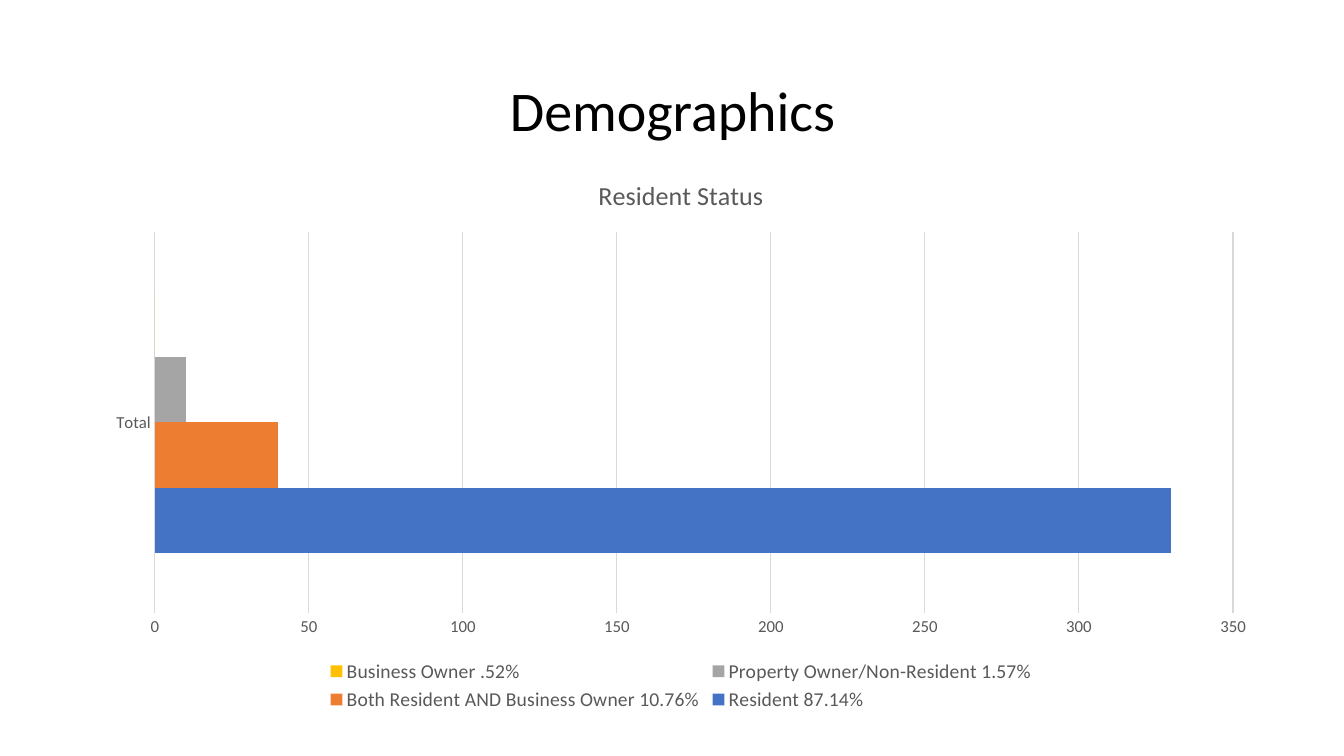
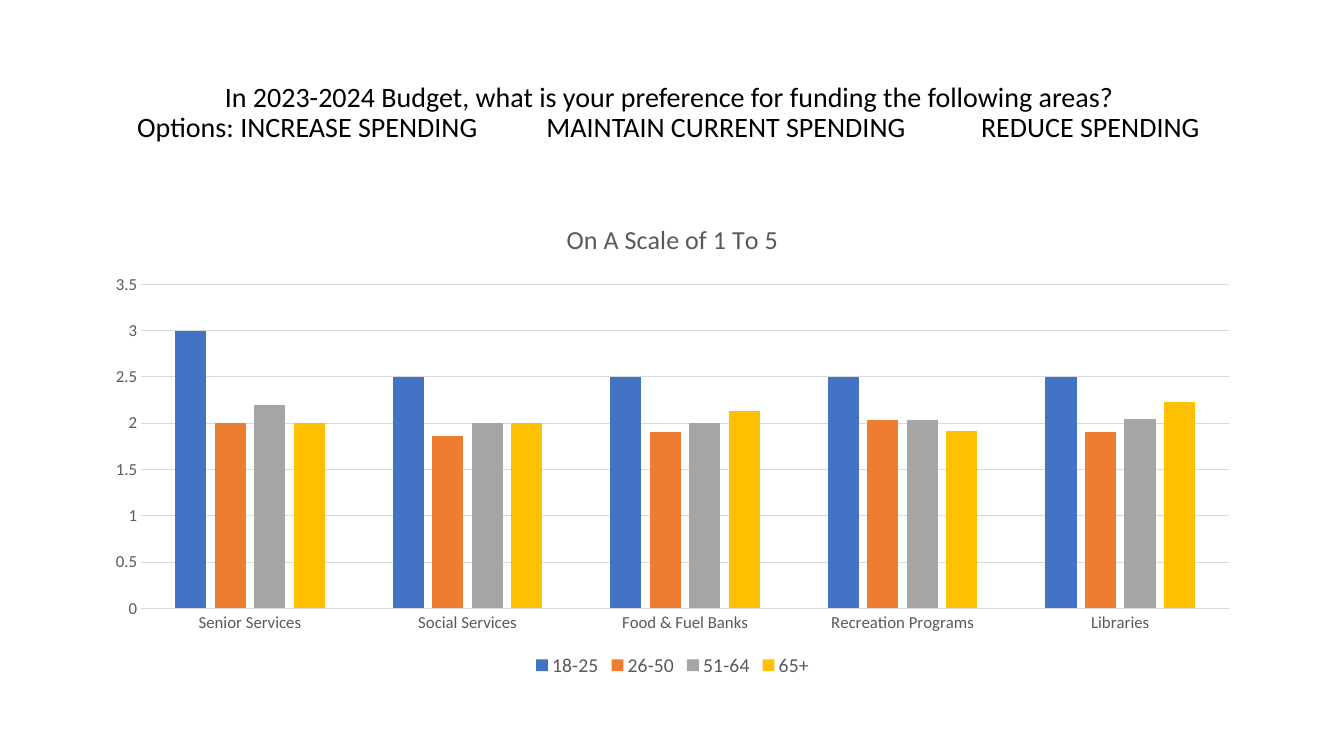
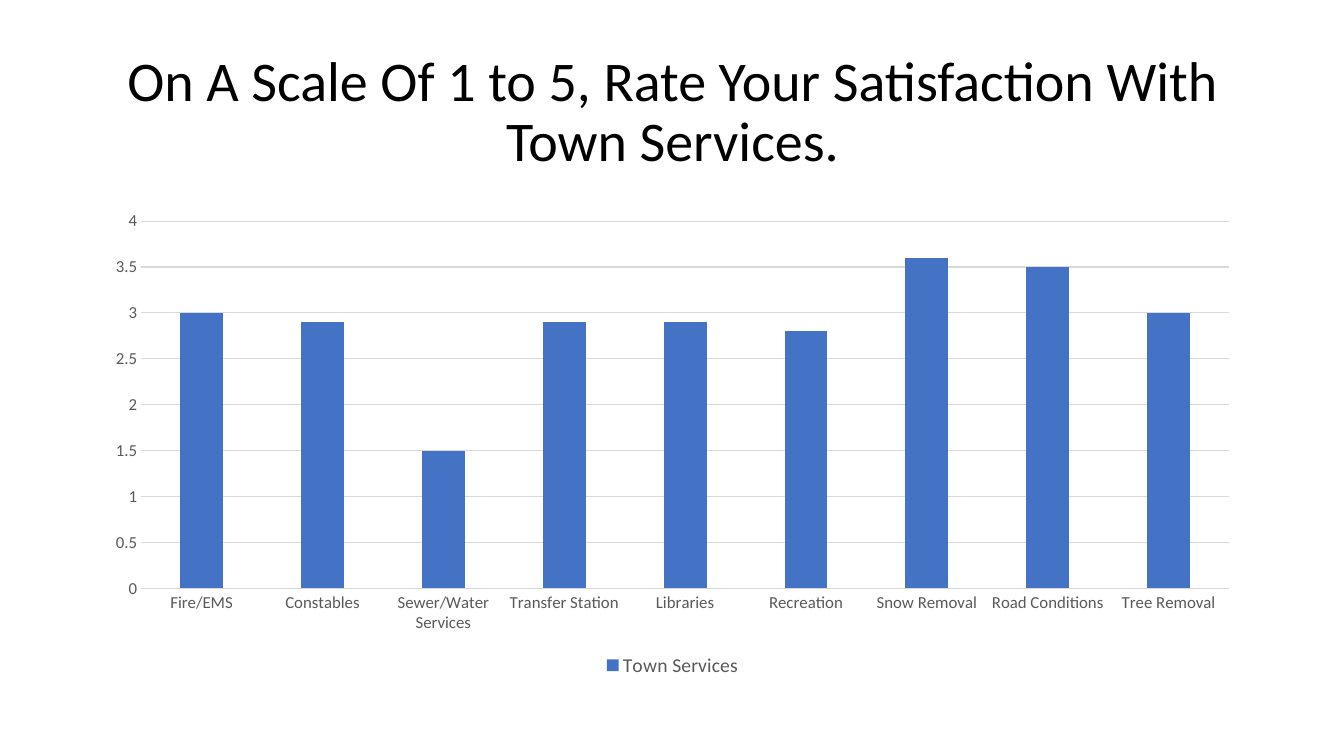
"""Build three survey result slides, each with a title and a bar chart."""
import dataclasses

import pptx
import pptx.chart.data
import pptx.dml.color
import pptx.enum.chart
import pptx.enum.text
import pptx.oxml.ns
import pptx.util
from lxml import etree

Inches = pptx.util.Inches
Pt = pptx.util.Pt
Color = pptx.dml.color.RGBColor.from_string
ChartType = pptx.enum.chart.XL_CHART_TYPE


@dataclasses.dataclass(frozen=True)
class Theme:
    font: str = "Calibri"
    ink: str = "000000"
    label: str = "595959"
    grid: str = "D9D9D9"
    series: tuple = ("4472C4", "ED7D31", "A5A5A5", "FFC000")
    title_size: float = 40
    question_size: float = 20
    chart_title_size: float = 18.6
    chart_size: float = 10
    legend_size: float = 14
    axis_size: float = 12
    line_width: float = 0.75


class SurveyDeck:
    def __init__(self, theme):
        self.theme = theme
        self.deck = pptx.Presentation()
        self.deck.slide_width = Inches(13.33)
        self.deck.slide_height = Inches(7.5)
        self.page = None

    def style_font(self, font, size, color):
        font.name = self.theme.font
        font.size = Pt(size)
        font.bold = False
        font.color.rgb = Color(color)

    def style_line(self, line):
        line.color.rgb = Color(self.theme.grid)
        line.width = Pt(self.theme.line_width)

    def add_page(self, lines, size, tab_stops=()):
        self.page = self.deck.slides.add_slide(self.deck.slide_layouts[5])
        box = self.page.shapes.title
        box.left, box.top = Inches(0.92), Inches(0.4)
        box.width, box.height = Inches(11.5), Inches(1.45)
        frame = box.text_frame
        frame.text = "\n".join(lines)
        frame.word_wrap = True
        frame.auto_size = pptx.enum.text.MSO_AUTO_SIZE.NONE
        frame.vertical_anchor = pptx.enum.text.MSO_ANCHOR.MIDDLE
        for para in frame.paragraphs:
            para.line_spacing = 0.9
            para.alignment = pptx.enum.text.PP_ALIGN.CENTER
            self.style_font(para.font, size, self.theme.ink)
            if "\t" in para.text:
                para.alignment = pptx.enum.text.PP_ALIGN.LEFT
                self.add_tab_stops(para, tab_stops)

    def add_tab_stops(self, para, tab_stops):
        tabs = etree.Element(pptx.oxml.ns.qn("a:tabLst"))
        for stop in tab_stops:
            etree.SubElement(tabs, pptx.oxml.ns.qn("a:tab"), pos=str(Inches(stop)), algn="l")
        properties = para._p.get_or_add_pPr()
        properties.find(pptx.oxml.ns.qn("a:defRPr")).addprevious(tabs)

    def add_chart(self, kind, categories, series, gap, title=None, overlap=0,
                  area=(0.92, 2, 11.5, 4.76)):
        data = pptx.chart.data.CategoryChartData()
        data.categories = categories
        for name, values in series.items():
            data.add_series(name, values)
        chart = self.page.shapes.add_chart(kind, *map(Inches, area), data).chart
        self.style_font(chart.font, self.theme.chart_size, self.theme.ink)
        chart.has_title = title is not None
        if title:
            frame = chart.chart_title.text_frame
            frame.text = title
            self.style_font(frame.paragraphs[0].font, self.theme.chart_title_size, self.theme.label)
            chart.chart_title.include_in_layout = False
        chart.has_legend = True
        chart.legend.position = pptx.enum.chart.XL_LEGEND_POSITION.BOTTOM
        chart.legend.include_in_layout = False
        self.style_font(chart.legend.font, self.theme.legend_size, self.theme.label)
        for axis in (chart.category_axis, chart.value_axis):
            axis.major_tick_mark = pptx.enum.chart.XL_TICK_MARK.NONE
            axis.minor_tick_mark = pptx.enum.chart.XL_TICK_MARK.NONE
            self.style_font(axis.tick_labels.font, self.theme.axis_size, self.theme.label)
        chart.category_axis.has_major_gridlines = False
        self.style_line(chart.category_axis.format.line)
        chart.value_axis.has_major_gridlines = True
        self.style_line(chart.value_axis.major_gridlines.format.line)
        chart.value_axis.format.line.fill.background()
        plot = chart.plots[0]
        plot.vary_by_categories = False
        plot.gap_width = gap
        plot.overlap = overlap
        for bars, color in zip(plot.series, self.theme.series):
            bars.format.fill.solid()
            bars.format.fill.fore_color.rgb = Color(color)
            bars.invert_if_negative = False


def main():
    theme = Theme()
    survey = SurveyDeck(theme)

    survey.add_page(["Demographics"], theme.title_size)
    survey.add_chart(
        ChartType.BAR_CLUSTERED,
        ["Total"],
        {
            "Resident 87.14%": [330],
            "Both Resident AND Business Owner 10.76%": [40],
            "Property Owner/Non-Resident 1.57%": [10],
            "Business Owner .52%": [0],
        },
        gap=182,
        title="Resident Status",
        area=(0.92, 1.55, 11.67, 5.55),
    )

    survey.add_page(
        [
            "In 2023-2024 Budget, what is your preference for funding the following areas? ",
            "\tOptions: INCREASE SPENDING\tMAINTAIN CURRENT SPENDING\tREDUCE SPENDING",
        ],
        theme.question_size,
        tab_stops=(0.34, 4.4, 8.71),
    )
    survey.add_chart(
        ChartType.COLUMN_CLUSTERED,
        ["Senior Services", "Social Services", "Food & Fuel Banks",
         "Recreation Programs", "Libraries"],
        {
            "18-25": [3, 2.5, 2.5, 2.5, 2.5],
            "26-50": [2, 1.86, 1.9, 2.03, 1.9],
            "51-64": [2.2, 2, 2, 2.03, 2.04],
            "65+": [2, 2, 2.13, 1.92, 2.23],
        },
        gap=219,
        overlap=-27,
        title="On A Scale of 1 To 5",
    )

    survey.add_page(
        ["On A Scale Of 1 to 5, Rate Your Satisfaction With Town Services."],
        theme.title_size,
    )
    survey.add_chart(
        ChartType.COLUMN_CLUSTERED,
        ["Fire/EMS", "Constables", "Sewer/Water Services", "Transfer Station", "Libraries",
         "Recreation", "Snow Removal", "Road Conditions", "Tree Removal"],
        {"Town Services": [3, 2.9, 1.5, 2.9, 2.9, 2.8, 3.6, 3.5, 3]},
        gap=182,
    )

    survey.deck.save("out.pptx")


if __name__ == "__main__":
    main()
